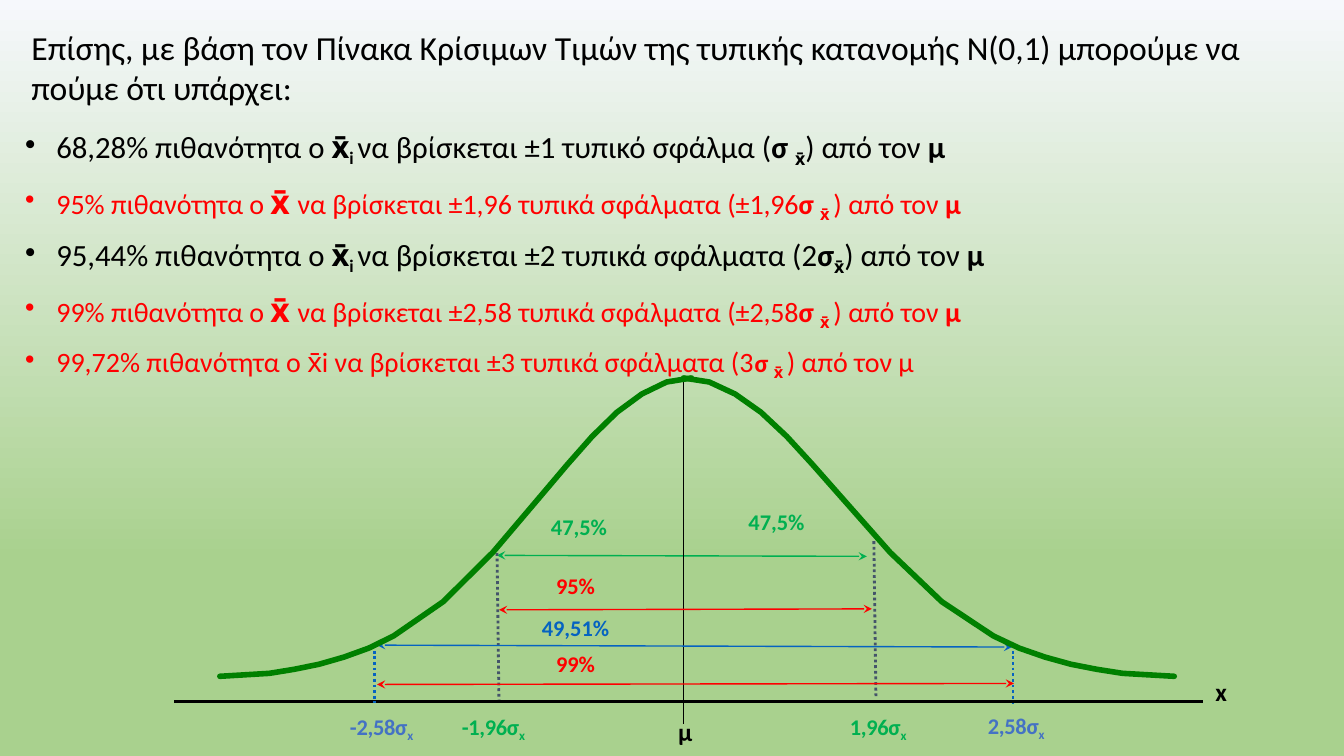
import pptx
import pptx.dml.color
import pptx.enum.dml
import pptx.enum.shapes
import pptx.enum.text
import pptx.oxml.ns
import pptx.util
import lxml.etree

Pt = pptx.util.Pt
ALIGN = pptx.enum.text.PP_ALIGN
COLOURS = {
    "sky": "F6F8FC", "meadow": "A9D18E", "black": "000000", "red": "FF0000",
    "green": "00B050", "blue": "0563C1", "indigo": "4472C4", "slate": "44546A",
    "curve": "008000",
}
RGB = {name: pptx.dml.color.RGBColor.from_string(value) for name, value in COLOURS.items()}
qn = pptx.oxml.ns.qn


def add_runs(paragraph, colour, runs):
    for text, size, bold, baseline, spacing in runs:
        run = paragraph.add_run()
        run.text = text
        run.font.name = "Calibri"
        run.font.size = Pt(size)
        run.font.bold = bold
        run.font.color.rgb = RGB[colour]
        properties = run.font._element
        if baseline:
            properties.set("baseline", str(baseline * 1000))
        if spacing:
            properties.set("spc", str(round(spacing * 100)))


def set_frame(frame, left, top, right, bottom):
    frame.word_wrap = True
    frame.auto_size = pptx.enum.text.MSO_AUTO_SIZE.NONE
    frame.margin_left, frame.margin_top = Pt(left), Pt(top)
    frame.margin_right, frame.margin_bottom = Pt(right), Pt(bottom)


presentation = pptx.Presentation()
presentation.slide_width = Pt(960)
presentation.slide_height = Pt(540)
slide = presentation.slides.add_slide(presentation.slide_layouts[5])
shapes = slide.shapes

background = slide.background.fill
background.gradient()
background.gradient_angle = 270
for stop, (position, colour) in zip(background.gradient_stops, [(0, "sky"), (0.74, "meadow")]):
    stop.position = position
    stop.color.rgb = RGB[colour]

title = shapes.title
title.left, title.top, title.width, title.height = Pt(21.6), Pt(18), Pt(923), Pt(59)
set_frame(title.text_frame, 0.8, 0.7, 0, 0)
title.text_frame.vertical_anchor = pptx.enum.text.MSO_ANCHOR.MIDDLE
heading = title.text_frame.paragraphs[0]
heading.alignment = ALIGN.LEFT
add_runs(heading, "black", [
    ("Επίσης, με βάση τον ", 24, False, 0, 0),
    ("Πίνακα ", 24, False, 0, -0.1),
    ("Κρίσιμων Τιμών της τυπικής κατανομής ", 24, False, 0, 0),
    ("Ν(0,1) μπορούμε να πούμε ότι υπάρχει:", 24, False, 0, -0.1),
])

lines = [
    (355, 396.7, 619.2, 397.4, "green", 1, "arrows"),
    (488.2, 270, 488.2, 517, "black", 1, None),
    (355, 391, 356.4, 500.4, "slate", 2, "dots"),
    (356.4, 435.6, 622.8, 434.9, "red", 1, "arrows"),
    (624.2, 386.6, 625.7, 499, "slate", 2, "dots"),
    (269.3, 488.9, 724.3, 488.2, "red", 1, "arrows"),
    (723.6, 460.8, 723.6, 503.3, "blue", 2, "dots"),
    (124.6, 501.1, 859, 501.1, "black", 1.5, None),
    (267.8, 460.8, 267.8, 501.8, "blue", 2, "dots"),
    (269.3, 460.8, 722.9, 462.2, "blue", 1, "arrows"),
]
for x1, y1, x2, y2, colour, width, style in lines:
    connector = shapes.add_connector(
        pptx.enum.shapes.MSO_CONNECTOR.STRAIGHT, Pt(x1), Pt(y1), Pt(x2), Pt(y2))
    connector.line.color.rgb = RGB[colour]
    connector.line.width = Pt(width)
    if style == "dots":
        connector.line.dash_style = pptx.enum.dml.MSO_LINE.ROUND_DOT
    if style == "arrows":
        for end in ("a:headEnd", "a:tailEnd"):
            lxml.etree.SubElement(connector.line._get_or_add_ln(), qn(end), type="stealth")
    lxml.etree.SubElement(connector._element.spPr, qn("a:effectLst"))

curve_steps = [0, 1, 2, 3, 4, 5, 6, 8, 10, 12, 13, 14, 15, 16, 17, 19]
curve_heights = [270, 272.9, 281.5, 294.5, 311.8, 331.9, 352.8, 394.6,
                 429.8, 454.3, 463, 469.4, 474.5, 478.1, 481, 483.1]
for peak, step_width in [(488.2, 18.45), (493.9, -17.73)]:
    points = [(Pt(peak + step * step_width), Pt(height))
              for step, height in zip(curve_steps, curve_heights)]
    builder = shapes.build_freeform(*points[0])
    builder.add_line_segments(points[1:], close=False)
    half_curve = builder.convert_to_shape()
    half_curve.shadow.inherit = False
    half_curve.fill.background()
    half_curve.line.color.rgb = RGB["curve"]
    half_curve.line.width = Pt(4)
    half_curve.line._get_or_add_ln().set("cap", "rnd")

labels = [
    ("47,5%", 382.3, 362.9, 62.6, "green", 16, ALIGN.CENTER),
    ("47,5%", 523.4, 359.3, 62.6, "green", 16, ALIGN.CENTER),
    ("95%", 379.4, 405.4, 63.4, "red", 16, ALIGN.CENTER),
    ("49,51%", 379.4, 434.9, 63.4, "blue", 16, ALIGN.CENTER),
    ("99%", 379.4, 460.8, 63.4, "red", 16, ALIGN.CENTER),
    ("μ", 477.4, 508.3, 28, "black", 18, ALIGN.LEFT),
    ("x", 861.1, 479.5, 42.5, "black", 18, ALIGN.LEFT),
]
for text, left, top, width, colour, size, alignment in labels:
    label = shapes.add_textbox(Pt(left), Pt(top), Pt(width), Pt(27))
    set_frame(label.text_frame, 7.2, 3.6, 7.2, 3.6)
    paragraph = label.text_frame.paragraphs[0]
    paragraph.alignment = alignment
    add_runs(paragraph, colour, [(text, size, True, 0, 0)])

ticks = [
    ("-2,58σ", 247, 509, "indigo"),
    ("-1,96σ", 326.9, 509, "green"),
    ("1,96σ", 604.1, 509, "green"),
    ("2,58σ", 702.7, 508.3, "indigo"),
]
for text, left, top, colour in ticks:
    tick = shapes.add_textbox(Pt(left), Pt(top), Pt(58), Pt(20))
    set_frame(tick.text_frame, 3, 0.7, 0, 0)
    add_runs(tick.text_frame.paragraphs[0], colour, [
        (text, 16, True, 0, -0.2), ("x", 16, True, -21, -0.4)])

bullets = []
for share, errors, noun, factor, sigma, space in [
    ("68,28%", "±1", "τυπικό σφάλμα", "", "σ ", 0),
    ("95,44%", "±2", "τυπικά σφάλματα", "2", "σ", 8.5),
]:
    bullets.append(("black", space, 1, [
        (f"{share} πιθανότητα ο ", 22, False, 0, 0), ("x̄", 22, True, 0, 0),
        ("i ", 21.8, True, -19, 0),
        (f"να βρίσκεται {errors} {noun} ({factor}", 22, False, 0, 0),
        (sigma, 22, True, 0, 0), ("x̄", 21.8, True, -21, 0),
        (") από τον ", 22, False, 0, 0), ("μ", 22, True, 0, -0.5),
    ]))
for position, share, errors, space, line_spacing in [
    (1, "95%", "±1,96", 6, 1.1), (3, "99%", "±2,58", 8.8, 1),
]:
    bullets.insert(position, ("red", space, line_spacing, [
        (f"{share} ", 20, False, 0, 0), ("πιθανότητα ", 20, False, 0, -0.1),
        ("ο ", 20, False, 0, 0), ("x̄ ", 24, True, 0, 0), ("να ", 20, False, 0, 0),
        ("βρίσκεται ", 20, False, 0, -0.1), (f"{errors} ", 20, False, 0, 0),
        ("τυπικά ", 20, False, 0, -0.1), ("σφάλματα ", 20, False, 0, 0),
        (f"({errors}", 20, False, 0, -0.1), ("σ ", 20, True, 0, -0.1),
        ("x̄ ", 20.2, True, -21, 0), (") από τον ", 20, False, 0, 0),
        ("μ", 20, True, 0, -0.5),
    ]))
bullets.append(("red", 8.8, 1, [
    ("99,72% πιθανότητα ο x̄i να βρίσκεται ±3 τυπικά σφάλματα (3", 20, False, 0, 0),
    ("σ ", 18, True, 0, -0.1), ("x̄ ", 20, True, -21, 0),
    (") από τον μ", 20, False, 0, 0),
]))

body = shapes.add_textbox(Pt(8.6), Pt(90.7), Pt(916), Pt(199))
set_frame(body.text_frame, 0, 0.7, 0, 0)
for index, (colour, space, line_spacing, runs) in enumerate(bullets):
    paragraph = body.text_frame.add_paragraph() if index else body.text_frame.paragraphs[0]
    paragraph.space_before = Pt(space)
    paragraph.line_spacing = float(line_spacing)
    properties = paragraph._element.get_or_add_pPr()
    properties.set("marL", str(Pt(31.7)))
    properties.set("indent", str(Pt(-22.3)))
    lxml.etree.SubElement(properties, qn("a:buChar"), char="•")
    add_runs(paragraph, colour, runs)

presentation.save("out.pptx")
